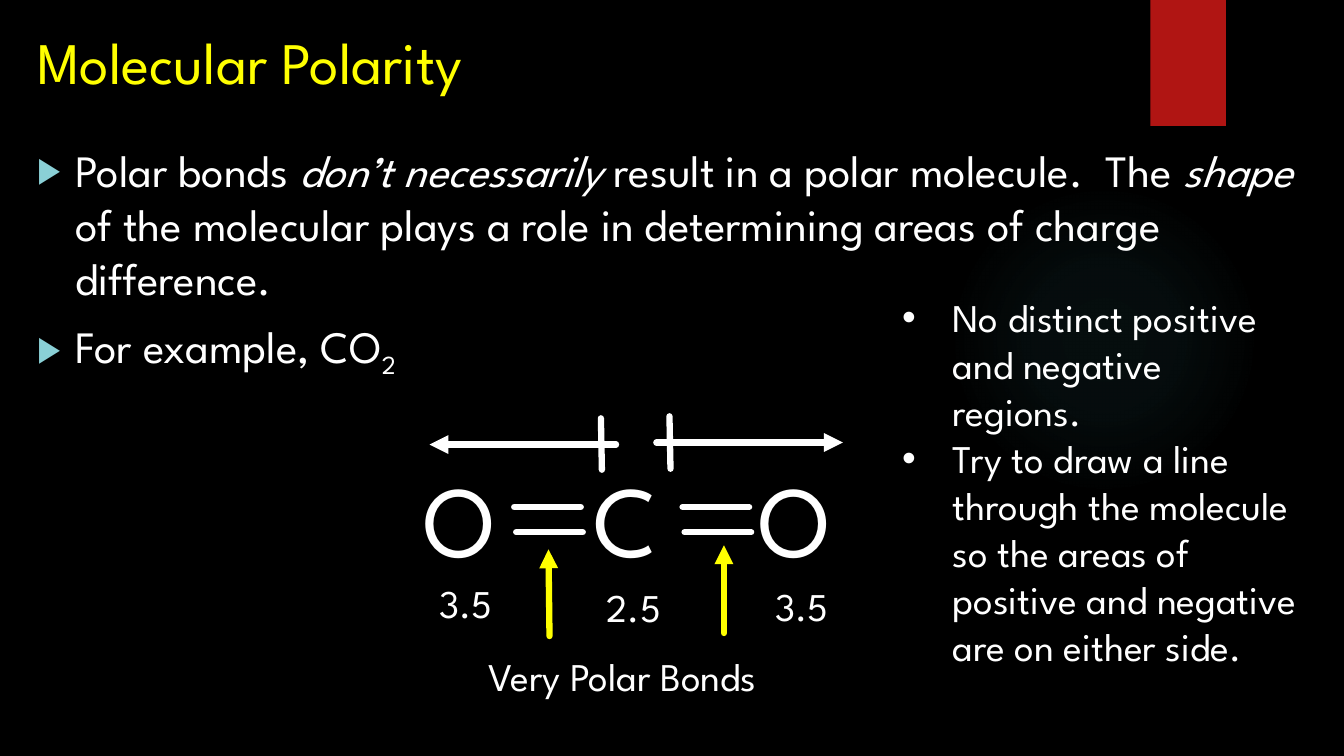
import pptx
import pptx.dml.color
import pptx.enum.shapes
import pptx.oxml
import pptx.oxml.ns
import pptx.util
from lxml import etree

PX = 9144  # 100 px to the inch
FONT = "League Spartan"
WHITE, YELLOW, BLACK = "FFFFFF", "FFFF00", "000000"
RED, TEAL, PALE_TEAL = "B01513", "50B9C1", "8AD0D6"
SHAPES = pptx.enum.shapes.MSO_SHAPE


def px(length):
    return pptx.util.Emu(length * PX)


def rgb(value):
    return pptx.dml.color.RGBColor.from_string(value)


def element(parent, tag, **attributes):
    child = etree.SubElement(parent, pptx.oxml.ns.qn(f"a:{tag}"))
    for name, value in attributes.items():
        child.set(name, str(value))
    return child


def add_bullet(para, char, color, percent, indent):
    properties = para._p.get_or_add_pPr()
    properties.set("marL", str(px(indent)))
    properties.set("indent", str(px(-indent)))
    element(element(properties, "buClr"), "srgbClr", val=color)
    element(properties, "buSzPct", val=percent * 1000)
    element(properties, "buFont", typeface="Arial")
    element(properties, "buChar", char=char)


def add_text(page, box, paragraphs, size=28, color=WHITE, bullet=None, gap=0):
    """Each paragraph is a list of (text, style) pairs; style is "", "italic" or "sub"."""
    frame = page.shapes.add_textbox(*map(px, box)).text_frame
    frame.word_wrap = True
    for index, spans in enumerate(paragraphs):
        para = frame.paragraphs[0] if index == 0 else frame.add_paragraph()
        if index and gap:
            para.space_before = pptx.util.Pt(gap)
        if bullet:
            add_bullet(para, **bullet)
        for text, style in spans:
            span = para.add_run()
            span.text = text
            span.font.name = FONT
            span.font.size = pptx.util.Pt(size)
            span.font.color.rgb = rgb(color)
            if style == "italic":
                span.font.italic = True
            elif style == "sub":
                span._r.get_or_add_rPr().set("baseline", "-25000")


def add_line(page, start, end, color=WHITE, arrow=False):
    line = page.shapes.add_connector(
        pptx.enum.shapes.MSO_CONNECTOR.STRAIGHT, *map(px, start + end))
    line.line.color.rgb = rgb(color)
    line.line.width = pptx.util.Pt(4.5)
    outline = line.line._get_or_add_ln()
    outline.set("cap", "rnd")
    if arrow:
        element(outline, "tailEnd", type="triangle")
    element(line._element.spPr, "effectLst")


def add_plain_shape(page, kind, box, color):
    shape = page.shapes.add_shape(kind, *map(px, box))
    shape.shadow.inherit = False
    shape.fill.solid()
    shape.fill.fore_color.rgb = rgb(color)
    shape.line.fill.background()
    return shape


def add_glow(page, box):
    glow = add_plain_shape(page, SHAPES.OVAL, box, TEAL)
    solid = glow._element.spPr.find(pptx.oxml.ns.qn("a:solidFill"))
    gradient = pptx.oxml.parse_xml(f"<a:gradFill {pptx.oxml.ns.nsdecls('a')}/>")
    stops = element(gradient, "gsLst")
    for position, alpha in ((0, 7), (36, 6), (69, 0)):
        stop = element(stops, "gs", pos=position * 1000)
        element(element(stop, "srgbClr", val=TEAL), "alpha", val=alpha * 1000)
    center = element(gradient, "path", path="circle")
    element(center, "fillToRect", l=50000, t=50000, r=50000, b=50000)
    solid.getparent().replace(solid, gradient)


def add_background(page):
    page.background.fill.solid()
    page.background.fill.fore_color.rgb = rgb(BLACK)
    add_glow(page, (941, 183, 308, 308))
    add_plain_shape(page, SHAPES.RECTANGLE, (1141, 0, 75, 125), RED)


def add_body(page, box):
    add_text(page, box, [
        [("Polar bonds ", ""), ("don’t necessarily ", "italic"),
         ("result in a polar molecule.  The ", ""), ("shape", "italic"),
         (" of the molecular plays a role in determining areas of charge difference.", "")],
        [("For example, CO", ""), ("2", "sub")],
    ], size=32, gap=10,
        bullet=dict(char="▶", color=PALE_TEAL, percent=80, indent=38))


def add_molecule(page, box):
    left, top = box[:2]

    def at(x, y):
        return left + x, top + y

    for symbol, x in (("O", 0), ("C", 169), ("O", 332)):
        add_text(page, at(x, 35) + (102, 131), [[(symbol, "")]], size=72)
    for value, x, y in (("3.5", 16, 157), ("2.5", 182, 161), ("3.5", 349, 160)):
        add_text(page, at(x, y) + (86, 57), [[(value, "")]])
    add_text(page, at(65, 229) + (336, 57), [[("Very Polar Bonds", "")]])

    for x in (100, 267):  # double bonds
        add_line(page, at(x, 90), at(x + 66, 90))
        add_line(page, at(x + 2, 115), at(x + 68, 115))
    # dipole arrows with their cross bars
    add_line(page, at(201, 28), at(16, 28), arrow=True)
    add_line(page, at(187, 53), at(186, 2))
    add_line(page, at(241, 26), at(426, 26), arrow=True)
    add_line(page, at(254, 0), at(255, 52))
    # pointers to the bonds
    add_line(page, at(135, 218), at(134, 132), YELLOW, arrow=True)
    add_line(page, at(308, 215), at(308, 128), YELLOW, arrow=True)


def add_notes_column(page, box):
    add_text(page, box, [
        [("No distinct positive and negative regions.", "")],
        [("Try to draw a line through the molecule so the areas of "
          "positive and negative are on either side.", "")],
    ], bullet=dict(char="•", color=WHITE, percent=100, indent=50))


def main():
    deck = pptx.Presentation()
    deck.slide_width, deck.slide_height = px(1333), px(750)
    page = deck.slides.add_slide(deck.slide_layouts[6])
    add_background(page)
    add_text(page, (27, 21, 549, 95), [[("Molecular Polarity", "")]], size=42, color=YELLOW)
    add_body(page, (27, 137, 1269, 263))
    add_molecule(page, (410, 413, 435, 286))
    add_notes_column(page, (885, 286, 412, 434))
    deck.save("out.pptx")


if __name__ == "__main__":
    main()
